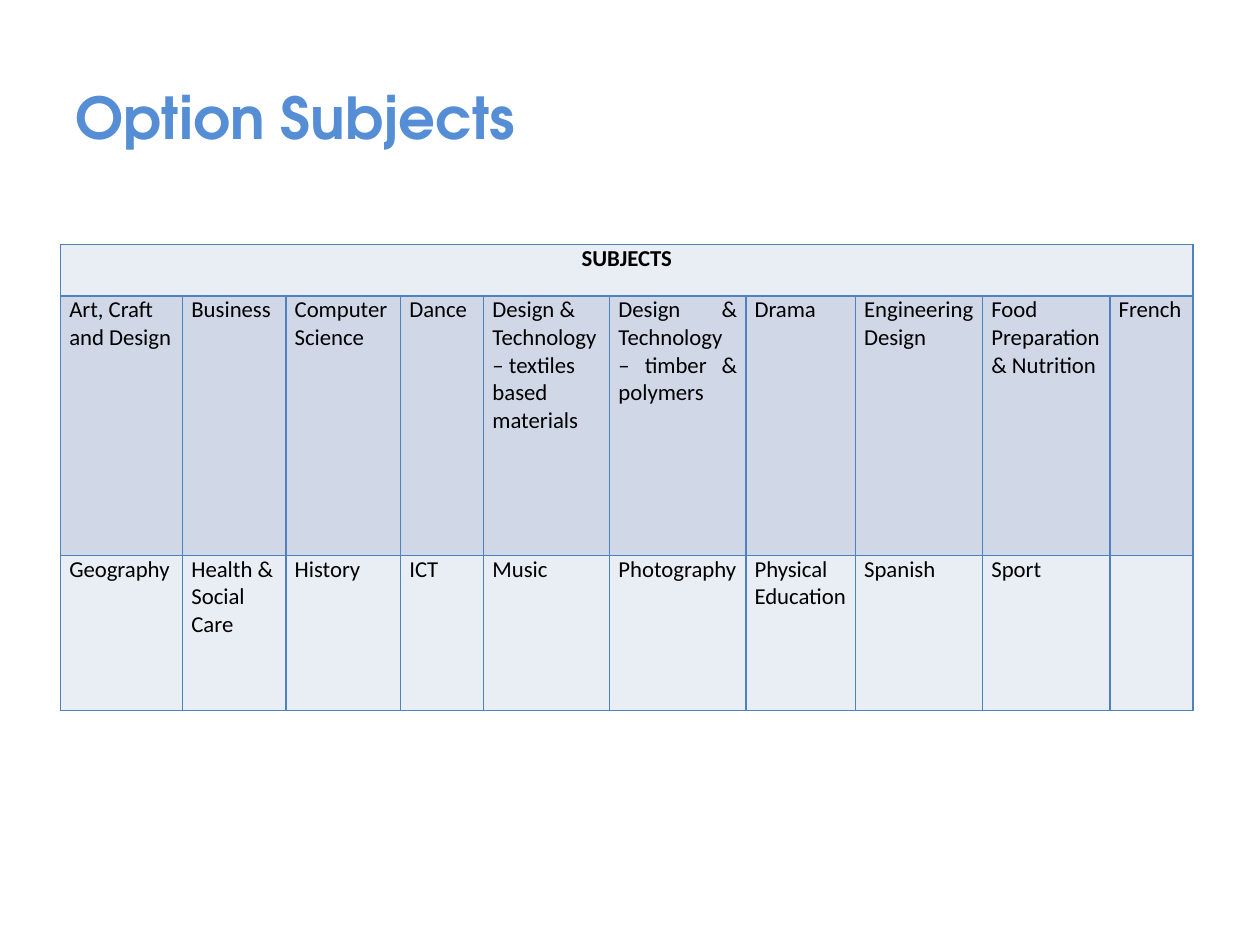
"""Build the Option Subjects slide with its table of subjects."""
from lxml import etree
from pptx import Presentation
from pptx.dml.color import RGBColor
from pptx.enum.text import MSO_ANCHOR, PP_ALIGN as Align
from pptx.oxml import parse_xml
from pptx.oxml.ns import nsdecls
from pptx.util import Inches, Pt

TITLE_BLUE = RGBColor(0x55, 0x8E, 0xD5)
BORDER_BLUE = RGBColor(0x4F, 0x81, 0xBD)
PALE = RGBColor(0xE9, 0xED, 0xF4)
BAND = RGBColor(0xD0, 0xD8, 0xE8)
BLACK = RGBColor(0, 0, 0)

COLUMN_WIDTHS = [0.97, 0.82, 0.91, 0.66, 1, 1.08, 0.87, 1.01, 1.01, 0.66]
ROW_HEIGHTS = [0.41, 2.06, 1.23]
ROW_FILLS = [PALE, BAND, PALE]
SUBJECTS = [
    ["SUBJECTS"] + [""] * 9,
    ["Art, Craft and Design", "Business", "Computer Science", "Dance",
     "Design & Technology – textiles based materials",
     "Design & Technology – timber & polymers", "Drama",
     "Engineering Design", "Food Preparation & Nutrition", "French"],
    ["Geography", "Health & Social Care", "History", "ICT", "Music",
     "Photography", "Physical Education", "Spanish", "Sport", ""],
]
ALIGNMENTS = {(0, 0): Align.CENTER, (1, 5): Align.JUSTIFY, (2, 0): Align.JUSTIFY,
              (2, 3): Align.JUSTIFY, (2, 8): Align.JUSTIFY}


def add_borders(cell):
    for side in ("lnL", "lnR", "lnT", "lnB"):
        line = parse_xml(f'<a:{side} {nsdecls("a")} w="{Pt(1)}"><a:solidFill>'
                         f'<a:srgbClr val="{BORDER_BLUE}"/></a:solidFill></a:{side}>')
        cell._tc.get_or_add_tcPr().append(line)


deck = Presentation()
deck.slide_width, deck.slide_height = Inches(10), Inches(7.5)
page = deck.slides.add_slide(deck.slide_layouts[6])

title = page.shapes.add_textbox(Inches(0.5), Inches(0.3), Inches(9), Inches(1.25))
frame = title.text_frame
frame.word_wrap = True
frame.vertical_anchor = MSO_ANCHOR.MIDDLE
para = frame.paragraphs[0]
para.text = "Option Subjects"
para.font.name, para.font.size, para.font.bold = "TeX Gyre Adventor", Pt(33), True
para.font.color.rgb = TITLE_BLUE

table = page.shapes.add_table(
    len(ROW_HEIGHTS), len(COLUMN_WIDTHS), Inches(0.48), Inches(1.94),
    Inches(sum(COLUMN_WIDTHS)), Inches(sum(ROW_HEIGHTS))).table
for column, width in zip(table.columns, COLUMN_WIDTHS):
    column.width = Inches(width)
for row, height in zip(table.rows, ROW_HEIGHTS):
    row.height = Inches(height)
table.cell(0, 0).merge(table.cell(0, len(COLUMN_WIDTHS) - 1))

for row_index, subjects in enumerate(SUBJECTS):
    for column_index, subject in enumerate(subjects):
        cell = table.cell(row_index, column_index)
        cell.margin_left = cell.margin_right = Inches(0.07)
        cell.margin_top = cell.margin_bottom = 0
        add_borders(cell)
        cell.fill.solid()
        cell.fill.fore_color.rgb = ROW_FILLS[row_index]
        para = cell.text_frame.paragraphs[0]
        if subject:
            para.text = subject
        para.alignment = ALIGNMENTS.get((row_index, column_index), Align.LEFT)
        para.font.name, para.font.size = "Calibri", Pt(13)
        para.font.bold = row_index == 0
        para.font.color.rgb = BLACK

deck.save("out.pptx")
